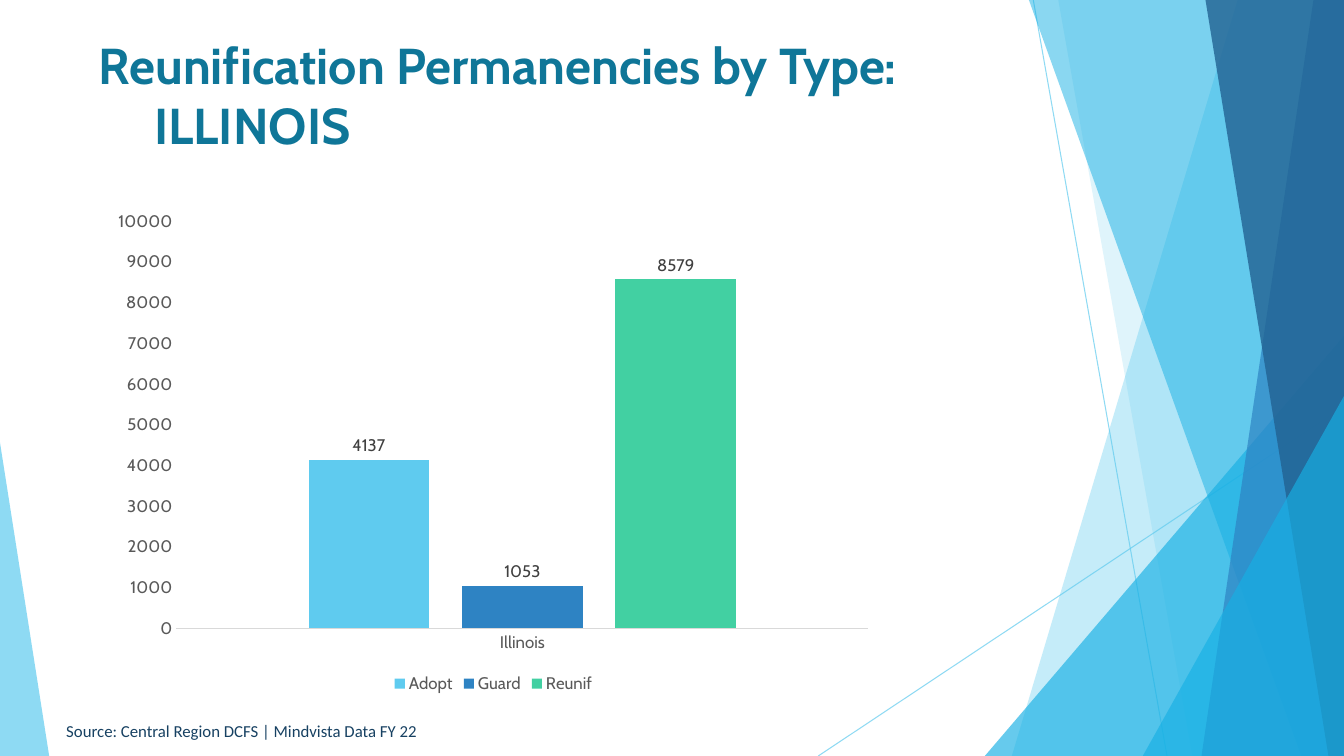
from lxml.etree import SubElement as Sub
from pptx import Presentation
from pptx.chart.data import CategoryChartData as Data
from pptx.dml.color import RGBColor
from pptx.enum.chart import XL_CHART_TYPE as Kind, XL_LABEL_POSITION as Spot
from pptx.enum.chart import XL_LEGEND_POSITION as Side, XL_TICK_MARK as Tick
from pptx.enum.shapes import MSO_CONNECTOR as Link, MSO_SHAPE as Form
from pptx.enum.text import MSO_ANCHOR as Anchor
from pptx.oxml.ns import qn
from pptx.util import Cm, Pt

SKY = RGBColor(0x5F, 0xCB, 0xEF)
CYAN = RGBColor(0x17, 0xB0, 0xE4)
BLUE = RGBColor(0x2E, 0x83, 0xC3)
NAVY = RGBColor(0x22, 0x62, 0x92)
GREEN = RGBColor(0x42, 0xD0, 0xA2)
TEAL = RGBColor(0x0F, 0x76, 0x98)
INK = RGBColor(0x17, 0x41, 0x62)
DARK = RGBColor(0x40, 0x40, 0x40)
GREY = RGBColor(0x59, 0x59, 0x59)
PALE = RGBColor(0xD9, 0xD9, 0xD9)

WIDTH, HEIGHT = 33.87, 19.05
BARS = [("Adopt", 4137, SKY), ("Guard", 1053, BLUE), ("Reunif", 8579, GREEN)]


def set_font(font, size, color, name="Cabin", bold=False):
    """Set the size, colour, typeface and weight of a font."""
    font.size, font.name, font.bold = Pt(size), name, bold
    font.color.rgb = color


def fade(shape, alpha):
    """Make the colours of a shape opaque to the given percentage."""
    for tone in shape._element.spPr.iter(qn("a:srgbClr")):
        Sub(tone, qn("a:alpha")).set("val", str(alpha * 1000))


def paint(shape, color, alpha):
    """Give a shape a see-through fill with no outline or shadow."""
    shape.shadow.inherit = False
    shape.fill.solid()
    shape.fill.fore_color.rgb = color
    shape.line.fill.background()
    fade(shape, alpha)


def add_line(slide, x1, y1, x2, y2):
    """Draw a thin pale line."""
    line = slide.shapes.add_connector(Link.STRAIGHT, Cm(x1), Cm(y1), Cm(x2), Cm(y2))
    line.line.color.rgb = SKY
    line.line.width = Pt(0.75)
    fade(line, 70)
    Sub(line._element.spPr, qn("a:effectLst"))


def add_band(slide, top, base, color, alpha):
    """Draw a full-height band from a slanted left edge to the slide's right edge."""
    pen = slide.shapes.build_freeform(Cm(top), 0)
    pen.add_line_segments([(Cm(x), Cm(y)) for x, y in
                           ((WIDTH, 0), (WIDTH, HEIGHT), (base, HEIGHT))])
    paint(pen.convert_to_shape(), color, alpha)


def add_wedge(slide, left, top, width, tip, color, alpha):
    """Draw a triangle that stands on the bottom edge of the slide."""
    wedge = slide.shapes.add_shape(Form.ISOSCELES_TRIANGLE, Cm(left), Cm(top),
                                   Cm(width), Cm(HEIGHT - top))
    wedge.adjustments[0] = tip
    paint(wedge, color, alpha)


def add_text(slide, box, lines, size, color, name, bold=False, indent=0):
    """Add a text box whose lines after the first are indented."""
    frame = slide.shapes.add_textbox(*map(Cm, box)).text_frame
    frame.word_wrap = True
    frame.vertical_anchor = Anchor.MIDDLE
    frame.text = "\n".join(lines)
    for para in frame.paragraphs:
        set_font(para.font, size, color, name, bold)
    for para in frame.paragraphs[1:]:
        para._p.get_or_add_pPr().set("marL", str(Cm(indent)))


def add_bars(slide, box):
    """Add the column chart with its labels and legend."""
    data = Data(number_format="0")
    data.categories = ["Illinois"]
    for name, value, _ in BARS:
        data.add_series(name, [value])
    chart = slide.shapes.add_chart(Kind.COLUMN_CLUSTERED, *map(Cm, box), data).chart
    chart.has_title = False
    set_font(chart.font, 12, GREY)
    chart.has_legend = True
    chart.legend.position = Side.BOTTOM
    chart.legend.include_in_layout = False
    set_font(chart.legend.font, 12, GREY)
    for axis in (chart.category_axis, chart.value_axis):
        axis.major_tick_mark = axis.minor_tick_mark = Tick.NONE
        axis.has_major_gridlines = False
        set_font(axis.tick_labels.font, 12, GREY)
    chart.category_axis.format.line.color.rgb = PALE
    chart.category_axis.format.line.width = Pt(0.75)
    scale = chart.value_axis
    scale.format.line.fill.background()
    scale.minimum_scale, scale.maximum_scale, scale.major_unit = 0, 10000, 1000
    plot = chart.plots[0]
    plot.gap_width, plot.overlap, plot.vary_by_categories = 219, -27, False
    for series, (_, _, color) in zip(plot.series, BARS):
        series.format.fill.solid()
        series.format.fill.fore_color.rgb = color
        labels = series.data_labels
        labels.show_value = True
        labels.position = Spot.OUTSIDE_END
        set_font(labels.font, 12, DARK)


def main():
    """Build the slide and save it."""
    deck = Presentation()
    deck.slide_width, deck.slide_height = Cm(WIDTH), Cm(HEIGHT)
    slide = deck.slides.add_slide(deck.slide_layouts[6])
    add_line(slide, 26.04, 0, 29.41, HEIGHT)
    add_line(slide, WIDTH, 10.24, 20.62, HEIGHT)
    add_band(slide, 31.19, 25.5, SKY, 36)
    add_band(slide, 26.67, 30.05, SKY, 20)
    add_wedge(slide, 24.82, 8.46, 9.05, 1, CYAN, 66)
    add_band(slide, 25.93, 32.79, CYAN, 50)
    add_band(slide, 33.1, 30.28, BLUE, 70)
    add_band(slide, 30.38, 33.48, NAVY, 80)
    add_wedge(slide, 28.8, 9.98, 5.07, 1, CYAN, 66)
    add_wedge(slide, 0, 11.15, 1.24, 0, SKY, 70)
    add_text(slide, (2.24, 0.84, 23.52, 3.07),
             ["Reunification Permanencies by Type:", "ILLINOIS"],
             36, TEAL, "Cabin", True, 1.4)
    add_text(slide, (1.42, 18.03, 11.38, 0.76),
             ["Source: Central Region DCFS | Mindvista Data FY 22"], 12, INK, "Calibri")
    add_bars(slide, (2.59, 5.08, 19.69, 12.5))
    deck.save("out.pptx")


if __name__ == "__main__":
    main()
